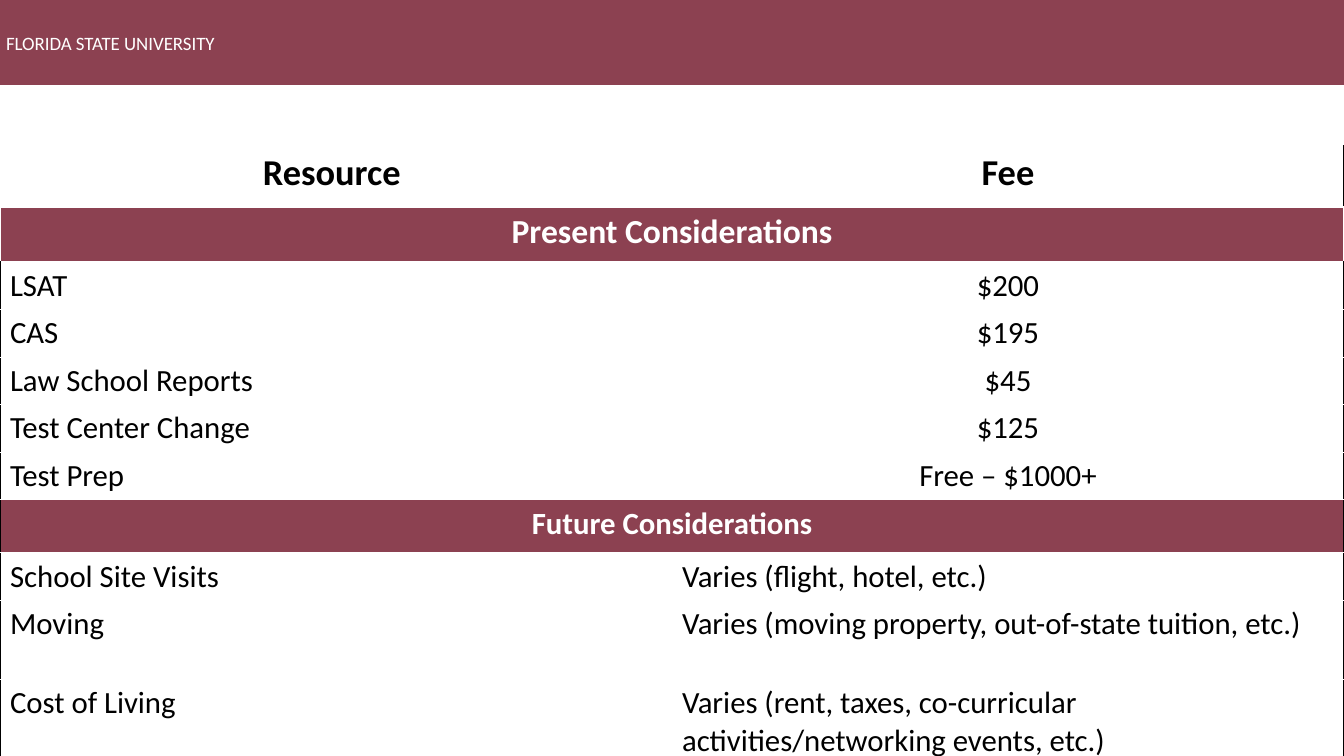
from lxml.etree import SubElement
from pptx import Presentation
from pptx.dml.color import RGBColor
from pptx.enum.shapes import MSO_SHAPE
from pptx.enum.text import MSO_ANCHOR, PP_ALIGN
from pptx.oxml.ns import qn
from pptx.util import Pt

WIDE, HIGH = 1344, 756
SCALE = 12192000 / WIDE
COLORS = {"garnet": "8C4151", "white": "FFFFFF", "black": "000000"}
LEFT, MID = PP_ALIGN.LEFT, PP_ALIGN.CENTER

PRESENT = [
    ("LSAT", "$200"),
    ("CAS", "$195"),
    ("Law School Reports", "$45"),
    ("Test Center Change", "$125"),
    ("Test Prep", "Free – $1000+"),
]
FUTURE = [
    ("School Site Visits", "Varies (flight, hotel, etc.)"),
    ("Moving", "Varies (moving property, out-of-state tuition, etc.)"),
    ("Cost of Living",
     "Varies (rent, taxes, co-curricular activities/networking events, etc.)"),
]
HEIGHTS = [61, 55] + [46] * 5 + [53, 46, 79, 82]


def px(count):
    return round(count * SCALE)


class Page:
    def __init__(self, deck, font):
        self.slide = deck.slides.add_slide(deck.slide_layouts[6])
        self.font = font

    def paint(self, thing, color):
        thing.fill.solid()
        thing.fill.fore_color.rgb = RGBColor.from_string(COLORS[color])

    def label(self, frame, text, size, color, align=LEFT, bold=False):
        para = frame.paragraphs[0]
        para.alignment = align
        run = para.add_run()
        run.text = text
        run.font.name = self.font
        run.font.size = Pt(size)
        run.font.bold = bold
        run.font.color.rgb = RGBColor.from_string(COLORS[color])

    def banner(self, left, top, width, height, text, inset):
        bar = self.slide.shapes.add_shape(
            MSO_SHAPE.RECTANGLE, px(left), px(top), px(width), px(height))
        bar.shadow.inherit = False
        bar.line.fill.background()
        self.paint(bar, "garnet")
        frame = bar.text_frame
        frame.margin_left = px(inset)
        frame.vertical_anchor = MSO_ANCHOR.MIDDLE
        self.label(frame, text, 13.5, "white")

    def grid(self, left, top, width, heights, cols):
        frame = self.slide.shapes.add_table(
            len(heights), cols, px(left), px(top), px(width), px(sum(heights)))
        table = frame.table
        table.first_row = table.horz_banding = False
        for row, height in zip(table.rows, heights):
            row.height = px(height)
        return table

    def edge(self, cell, **sides):
        """Draw 1 pt cell borders; sides not named are white."""
        props = cell._tc.get_or_add_tcPr()
        for spot, side in enumerate("LRTB"):
            line = props.makeelement(qn(f"a:ln{side}"), {"w": str(Pt(1))})
            fill = SubElement(line, qn("a:solidFill"))
            SubElement(fill, qn("a:srgbClr"), val=COLORS[sides.get(side, "white")])
            props.insert(spot, line)

    def fill(self, cell, text, size, color, back, align=LEFT, bold=False, **sides):
        self.paint(cell, back)
        self.label(cell.text_frame, text, size, color, align, bold)
        self.edge(cell, **sides)

    def band(self, table, row, text, size, **sides):
        cell = table.cell(row, 0)
        cell.merge(table.cell(row, 1))
        self.fill(cell, text, size, "white", "garnet", MID, True, **sides)

    def pairs(self, table, start, items, align):
        for row, (name, fee) in enumerate(items, start):
            base = "black" if row == len(table.rows) - 1 else "white"
            self.fill(table.cell(row, 0), name, 22, "black", "white",
                      L="black", B=base)
            self.fill(table.cell(row, 1), fee, 22, "black", "white", align,
                      R="black", B=base)


def main():
    deck = Presentation()
    deck.slide_width, deck.slide_height = px(WIDE), px(HIGH)
    page = Page(deck, "Calibri")
    page.banner(-88, 0, 1461, 85, "FLORIDA STATE UNIVERSITY", 94)

    table = page.grid(0, 146, WIDE, HEIGHTS, 2)
    page.fill(table.cell(0, 0), "Resource ", 26, "black", "white", MID, True)
    page.fill(table.cell(0, 1), "Fee", 26, "black", "white", MID, True, R="black")
    page.band(table, 1, "Present Considerations", 24)
    page.pairs(table, 2, PRESENT, MID)
    split = 2 + len(PRESENT)
    page.band(table, split, "Future Considerations", 22, L="black", R="black")
    page.pairs(table, split + 1, FUTURE, LEFT)
    deck.save("out.pptx")


if __name__ == "__main__":
    main()
